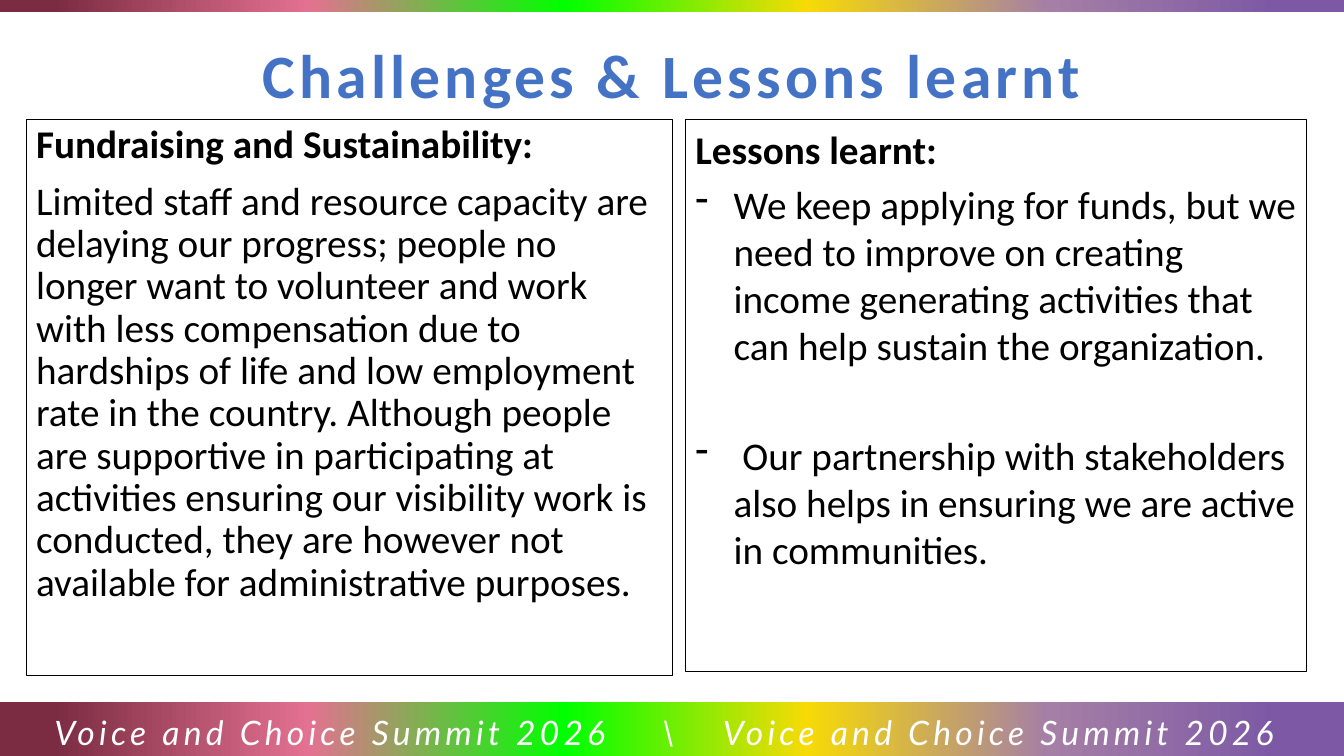
import pptx
import pptx.dml.color
import pptx.enum.shapes
import pptx.enum.text
import pptx.oxml.ns
import pptx.util
from lxml import etree

COLORS = {
    "ink": "000000",
    "title": "4472C4",
    "footer": "FFFFFF",
    "violet": "7D59A5",
    "mauve": "A57FA6",
    "yellow": "F7DA06",
    "green": "00FF00",
    "pink": "E37191",
    "maroon": "7B2C42",
}
RAINBOW = [(5, "violet"), (22, "mauve"), (40, "yellow"),
           (58, "green"), (77, "pink"), (96, "maroon")]

Pt = pptx.util.Pt
Inches = pptx.util.Inches
qn = pptx.oxml.ns.qn
ALIGN = pptx.enum.text.PP_ALIGN
ANCHOR = pptx.enum.text.MSO_ANCHOR
RECTANGLE = pptx.enum.shapes.MSO_SHAPE.RECTANGLE


def rgb(name):
    return pptx.dml.color.RGBColor.from_string(COLORS[name])


class SummitPage:
    """Slide style and drawing methods; frames are percentages of the slide."""

    def __init__(self, deck):
        self.deck = deck
        self.page = deck.slides.add_slide(deck.slide_layouts[5])

    def frame(self, left, top, width, height):
        across, down = self.deck.slide_width / 100, self.deck.slide_height / 100
        return (round(left * across), round(top * down),
                round(width * across), round(height * down))

    def style(self, para, size, color, font="Calibri", bold=False,
              italic=False, tracking=0):
        para.font.name = font
        para.font.size = Pt(size)
        para.font.bold = bold
        para.font.italic = italic
        para.font.color.rgb = rgb(color)
        if tracking:
            para.font._element.set("spc", str(tracking * 100))

    def title(self, text, *frame):
        box = self.page.shapes.title
        box.left, box.top, box.width, box.height = self.frame(*frame)
        box.text_frame.text = text
        box.text_frame.vertical_anchor = ANCHOR.MIDDLE
        para = box.text_frame.paragraphs[0]
        para.alignment = ALIGN.CENTER
        self.style(para, 44, "title", bold=True, tracking=3)

    def rainbow_bar(self, top, height):
        bar = self.page.shapes.add_shape(RECTANGLE, *self.frame(0, top, 100, height))
        bar.shadow.inherit = False
        bar.line.fill.background()
        bar.fill.gradient()
        bar.fill.gradient_angle = 180
        stops = bar._element.spPr.find(".//" + qn("a:gsLst"))
        for stop in list(stops):
            stops.remove(stop)
        for position, name in RAINBOW:
            stop = etree.SubElement(stops, qn("a:gs"), pos=str(position * 1000))
            etree.SubElement(stop, qn("a:srgbClr"), val=COLORS[name])

    def panel(self, heading, items, frame, gaps, spacing=1.0, dashed=False):
        """Outlined box with a bold heading; gaps holds the space before each item."""
        box = self.page.shapes.add_shape(RECTANGLE, *self.frame(*frame))
        box.shadow.inherit = False
        box.fill.background()
        box.line.color.rgb = rgb("ink")
        box.line.width = Pt(0.75)
        body = box.text_frame
        body.word_wrap = True
        body.vertical_anchor = ANCHOR.TOP
        for index, text in enumerate([heading, *items]):
            para = body.add_paragraph() if index else body.paragraphs[0]
            para.text = text
            if index and dashed:
                self.dash(para)
            para.alignment = ALIGN.LEFT
            para.line_spacing = spacing
            para.space_before = Pt(gaps[index - 1] if index else 0)
            self.style(para, 28, "ink", bold=index == 0)

    def dash(self, para):
        properties = para._p.get_or_add_pPr()
        indent = Inches(0.38)
        properties.set("marL", str(indent))
        properties.set("indent", str(-indent))
        etree.SubElement(properties, qn("a:buChar"), char="-")

    def footer(self, text, frame, start, tabs):
        """Single line that begins at start inches, with tab stops after it."""
        box = self.page.shapes.add_textbox(*self.frame(*frame))
        body = box.text_frame
        body.word_wrap = True
        body.margin_left = Inches(start)
        body.margin_right = 0
        para = body.paragraphs[0]
        para.text = text
        stops = etree.SubElement(para._p.get_or_add_pPr(), qn("a:tabLst"))
        for tab in tabs:
            etree.SubElement(stops, qn("a:tab"), pos=str(Inches(tab)), algn="l")
        para.line_spacing = 1.07
        self.style(para, 24, "footer", font="Lato", italic=True, tracking=3)


def main():
    deck = pptx.Presentation()
    deck.slide_width, deck.slide_height = Inches(13.33), Inches(7.5)
    summit = SummitPage(deck)
    summit.rainbow_bar(0, 1.6)
    summit.rainbow_bar(92.8, 7.2)
    summit.title("Challenges & Lessons learnt", 0, 3.6, 100, 12.27)
    summit.panel(
        "Lessons learnt:",
        ["We keep applying for funds, but we need to improve on creating income "
         "generating activities that can help sustain the organization.",
         " Our partnership with stakeholders also helps in ensuring we are "
         "active in communities."],
        (51, 15.87, 46.2, 72.93), gaps=[5.6, 45], dashed=True)
    summit.panel(
        "Fundraising and Sustainability:",
        ["Limited staff and resource capacity are delaying our progress; people "
         "no longer want to volunteer and work with less compensation due to "
         "hardships of life and low employment rate in the country. Although "
         "people are supportive in participating at activities ensuring our "
         "visibility work is conducted, they are however not available for "
         "administrative purposes."],
        (1.95, 15.87, 48.08, 73.47), gaps=[10], spacing=0.9)
    name = "Voice and Choice Summit 2026"
    summit.footer(f"{name}\t\\\t{name}", (0, 93.2, 100, 6.53),
                  start=0.54, tabs=[6.02, 6.63])
    deck.save("out.pptx")


if __name__ == "__main__":
    main()
